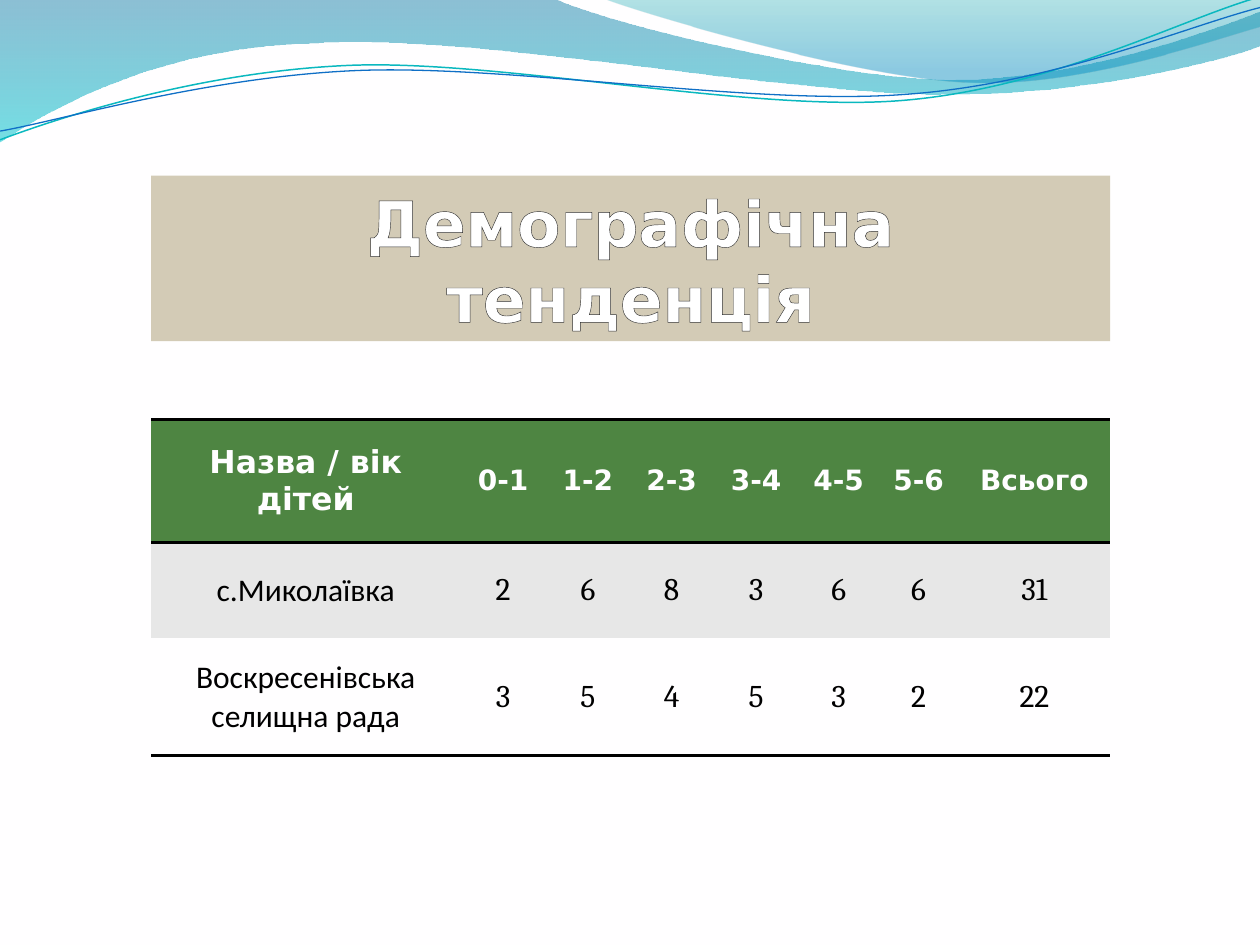
from lxml import etree
from pptx import Presentation
from pptx.dml.color import RGBColor
from pptx.enum.shapes import MSO_SHAPE
from pptx.enum.text import MSO_ANCHOR, PP_ALIGN
from pptx.oxml import parse_xml
from pptx.oxml.ns import nsdecls, qn
from pptx.util import Pt

RECTANGLE = MSO_SHAPE.RECTANGLE
CENTER = PP_ALIGN.CENTER
MIDDLE, BOTTOM = MSO_ANCHOR.MIDDLE, MSO_ANCHOR.BOTTOM
NO_TABLE_STYLE = "{2D5ABB26-0587-4C30-8999-92F81FD0307C}"

THEME = {
    "paper": "FFFEFF", "title": "FFFFFF", "ink": "000000", "banner": "D3CBB6",
    "outline": "323232", "header": "4E8542", "band": "E7E7E7",
    "heading_font": "DejaVu Sans", "name_font": "Calibri", "number_font": "Cambria",
    "title_size": 36, "body_size": 18, "age_size": 16, "rule": 2,
}

TITLE = "Демографічна\vтенденція"
ROWS = [
    ("Назва / вік дітей", "0-1", "1-2", "2-3", "3-4", "4-5", "5-6", "Всього"),
    ("с.Миколаївка", "2", "6", "8", "3", "6", "6", "31"),
    ("Воскресенівська селищна рада", "3", "5", "4", "5", "3", "2", "22"),
]
COLUMN_WIDTHS = [176.6, 49, 48, 47.6, 49, 45.4, 46, 86.4]
ROW_HEIGHTS = [70, 55, 67]
ROW_FILLS = [THEME["header"], THEME["band"], THEME["paper"]]
ROW_RULES = [("lnT", "lnB"), ("lnT",), ("lnB",)]
LEFT, TITLE_TOP, TITLE_HEIGHT, TABLE_TOP = 86.4, 100.4, 94.6, 239.8
CONTENT_WIDTH = sum(COLUMN_WIDTHS)

# A step of one point is a straight line, a step of three is a Bézier curve.
# Gradient stops: position, colour, opacity in percent.
WAVES = [
    {"start": (0, 0),
     "steps": [[(316.8, -0.7)],
               [(342.7, 12.2), (478.1, 45.4), (545.8, 45.4)],
               [(614.2, 45.4), (689.8, 18.7), (720, 6.5)],
               [(720.7, 25.9)],
               [(707.8, 31.7), (626.4, 54.7), (537.1, 54)],
               [(447.8, 54), (275, 20.2), (185, 24.5)],
               [(92.9, 25.9), (33.1, 59.8), (-0.7, 81.4)],
               [(0, 0)]],
     "stops": [(0, "0074A1", 45), (1, "00C6CF", 55)]},
    {"start": (344.9, -0.7),
     "steps": [[(366.5, 7.9), (491, 44.6), (553.7, 46.8)],
               [(616.3, 49.7), (691.9, 23), (720, 15.1)],
               [(720, 0)],
               [(344.9, -0.7)]],
     "stops": [(0, "00A1A9", 30), (0.8, "008BBF", 45)]},
    {"start": (0, 79.9),
     "steps": [[(34.6, 67), (113.8, 41), (199.4, 37.4)],
               [(284.4, 33.8), (427, 64.1), (513.4, 57.6)],
               [(599.8, 51.1), (675.4, 10.8), (718.6, -1.4)]],
     "line": ("0AB8BF", 0.85)},
    {"start": (0, 74.9),
     "steps": [[(33.8, 69.1), (118.1, 43.9), (203.8, 40.3)],
               [(290.2, 36.7), (429.8, 60.5), (516.2, 54)],
               [(601.9, 48.2), (677.5, 15.1), (720, 4.3)]],
     "line": ("0F6FC6", 0.75)},
]


def rgb(value):
    return RGBColor.from_string(value)


def paint(fill, color):
    fill.solid()
    fill.fore_color.rgb = rgb(color)


def bend(wave, steps):
    """Join the line segments of each three-point step into one Bézier curve."""
    segments = iter(list(wave.element.iter(qn("a:lnTo"))))
    for step in steps:
        parts = [next(segments) for _ in step]
        if len(parts) == 3:
            curve = etree.Element(qn("a:cubicBezTo"))
            parts[0].addprevious(curve)
            for part in parts:
                curve.append(part[0])
                part.getparent().remove(part)


def add_wave(slide, start, steps, stops=None, line=None):
    builder = slide.shapes.build_freeform(Pt(start[0]), Pt(start[1]))
    builder.add_line_segments([(Pt(x), Pt(y)) for step in steps for x, y in step],
                              close=bool(stops))
    wave = builder.convert_to_shape()
    bend(wave, steps)
    wave.shadow.inherit = False
    if line:
        wave.fill.background()
        wave.line.color.rgb = rgb(line[0])
        wave.line.width = Pt(line[1])
        return
    wave.line.fill.background()
    wave.fill.gradient()
    wave.fill.gradient_angle = 270
    for stop, (position, color, _) in zip(wave.fill.gradient_stops, stops):
        stop.position = position
        stop.color.rgb = rgb(color)
    for color, (_, _, opacity) in zip(wave.element.spPr.iter(qn("a:srgbClr")), stops):
        etree.SubElement(color, qn("a:alpha")).set("val", str(opacity * 1000))


def stroke(tag, color=None, width=0):
    """Return a line element, which is invisible without a colour."""
    fill = (f'<a:solidFill><a:srgbClr val="{color}"/></a:solidFill>' if color
            else "<a:noFill/>")
    return parse_xml(f'<a:{tag} {nsdecls("a")} w="{Pt(width)}">{fill}</a:{tag}>')


def format_text(frame, font, size, color, bold):
    paragraph = frame.paragraphs[0]
    paragraph.alignment = CENTER
    for run in paragraph.runs:
        run.font.name, run.font.size, run.font.bold = font, Pt(size), bold
        run.font.color.rgb = rgb(color)


def add_title(slide):
    banner = slide.shapes.add_shape(RECTANGLE, Pt(LEFT), Pt(TITLE_TOP),
                                    Pt(CONTENT_WIDTH), Pt(TITLE_HEIGHT))
    banner.shadow.inherit = False
    paint(banner.fill, THEME["banner"])
    banner.line.fill.background()
    frame = banner.text_frame
    frame.word_wrap = True
    frame.vertical_anchor = BOTTOM
    frame.text = TITLE
    format_text(frame, THEME["heading_font"], THEME["title_size"], THEME["title"], True)
    for properties in frame.paragraphs[0]._p.iter(qn("a:rPr")):
        properties.insert(0, stroke("ln", THEME["outline"], 1))


def set_borders(cell, rules):
    properties = cell._tc.get_or_add_tcPr()
    for i, side in enumerate(("lnL", "lnR", "lnT", "lnB")):
        border = stroke(side, THEME["ink"], THEME["rule"]) if side in rules else stroke(side)
        properties.insert(i, border)


def add_children_table(slide):
    frame = slide.shapes.add_table(len(ROWS), len(COLUMN_WIDTHS), Pt(LEFT), Pt(TABLE_TOP),
                                   Pt(CONTENT_WIDTH), Pt(sum(ROW_HEIGHTS)))
    table = frame.table
    table.first_row = table.horz_banding = False
    frame.element.find(".//" + qn("a:tableStyleId")).text = NO_TABLE_STYLE
    for column, width in zip(table.columns, COLUMN_WIDTHS):
        column.width = Pt(width)
    for r, (values, height) in enumerate(zip(ROWS, ROW_HEIGHTS)):
        table.rows[r].height = Pt(height)
        for c, value in enumerate(values):
            cell = table.cell(r, c)
            cell.text = value
            cell.vertical_anchor = MIDDLE
            paint(cell.fill, ROW_FILLS[r])
            set_borders(cell, ROW_RULES[r])
            if r == 0:
                size = THEME["age_size"] if c else THEME["body_size"]
                format_text(cell.text_frame, THEME["heading_font"], size, THEME["paper"], True)
            else:
                font = THEME["number_font"] if c else THEME["name_font"]
                format_text(cell.text_frame, font, THEME["body_size"], THEME["ink"], False)


def main():
    deck = Presentation()
    deck.slide_width, deck.slide_height = Pt(720), Pt(540)
    slide = deck.slides.add_slide(deck.slide_layouts[6])
    paint(slide.background.fill, THEME["paper"])
    for wave in WAVES:
        add_wave(slide, **wave)
    add_title(slide)
    add_children_table(slide)
    deck.save("out.pptx")


if __name__ == "__main__":
    main()
